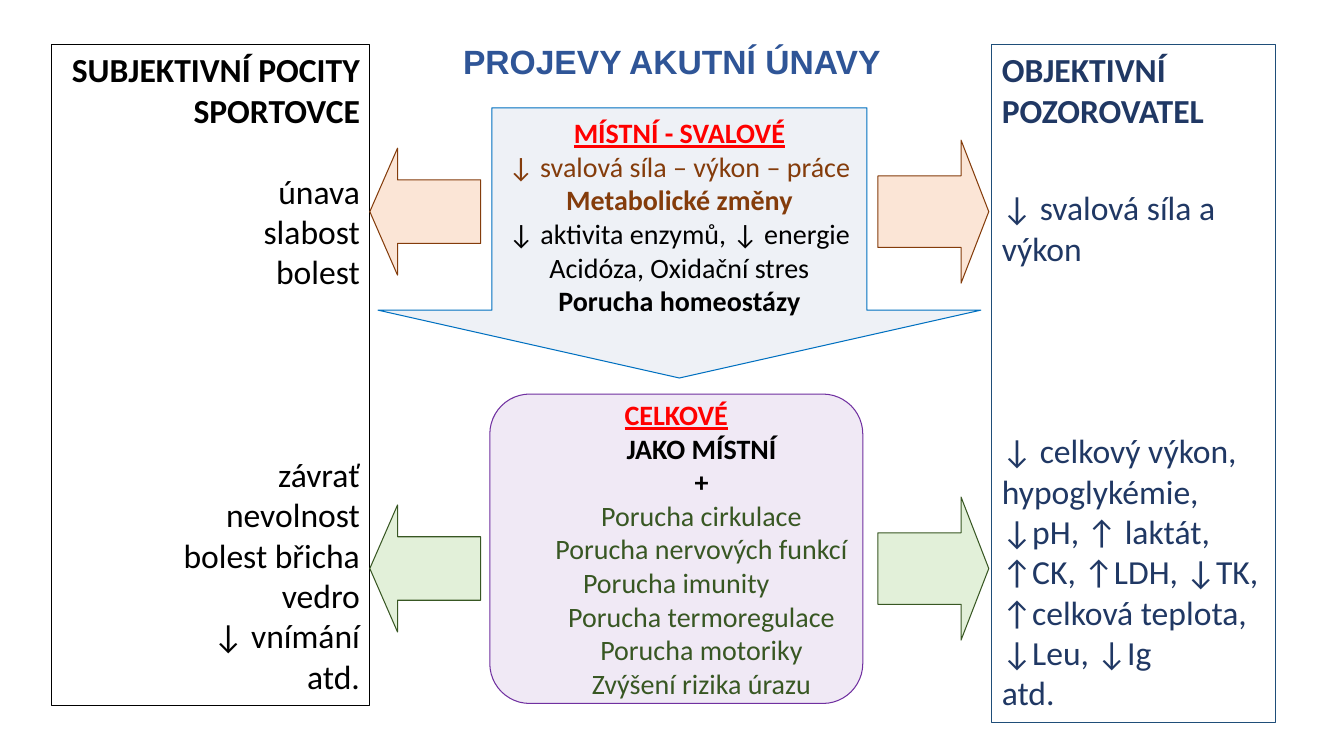
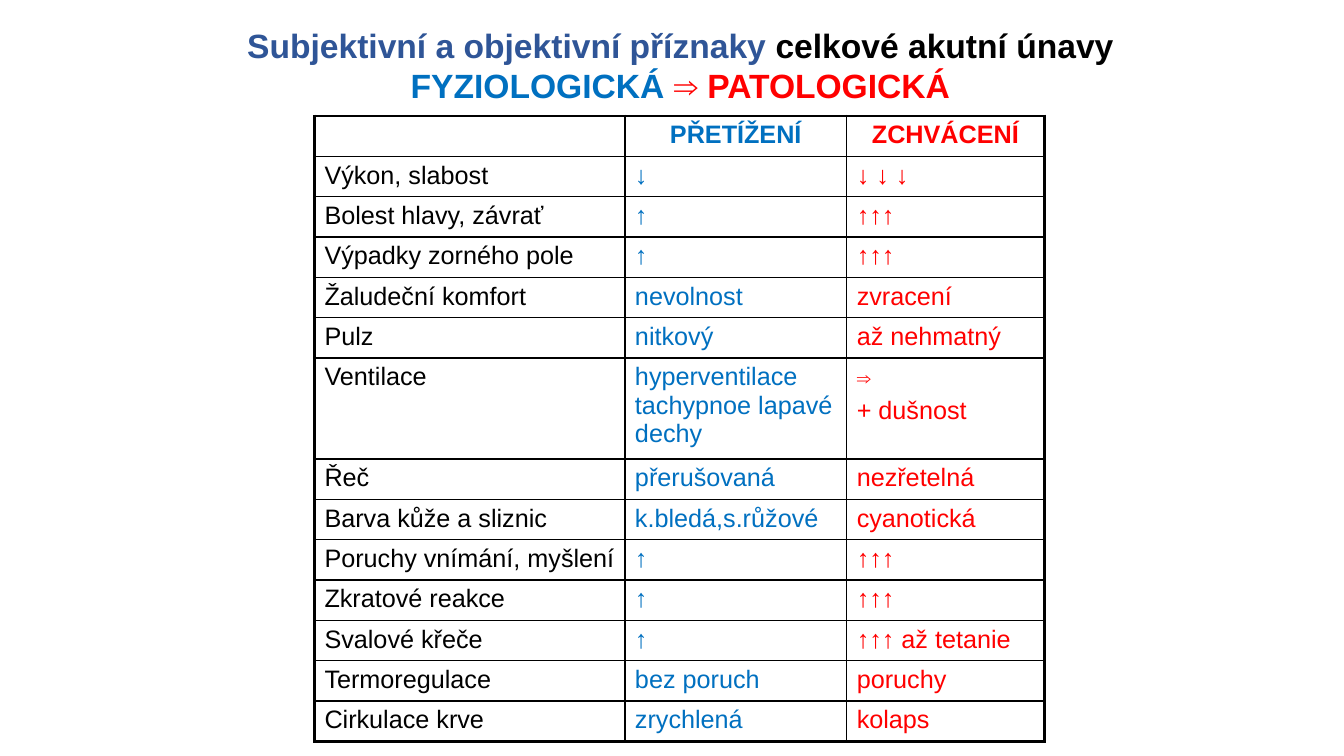
from dataclasses import dataclass

from lxml import etree
from pptx import Presentation
from pptx.dml.color import RGBColor
from pptx.enum.shapes import MSO_SHAPE
from pptx.enum.text import MSO_ANCHOR, PP_ALIGN
from pptx.oxml.ns import qn
from pptx.util import Pt

RECTANGLE = MSO_SHAPE.RECTANGLE
ROUNDED = MSO_SHAPE.ROUNDED_RECTANGLE
DOWN_ARROW = MSO_SHAPE.DOWN_ARROW
LEFT_ARROW = MSO_SHAPE.LEFT_ARROW
RIGHT_ARROW = MSO_SHAPE.RIGHT_ARROW
TOP, MIDDLE = MSO_ANCHOR.TOP, MSO_ANCHOR.MIDDLE
LEFT, CENTER, RIGHT = PP_ALIGN.LEFT, PP_ALIGN.CENTER, PP_ALIGN.RIGHT

BLACK, RED, BLUE, TITLE_BLUE = "000000", "FF0000", "0070C0", "2F5597"
NAVY, STEEL, PURPLE = "203864", "1F4E79", "7030A0"
BROWN, PEACH, GREEN, MINT = "843C0B", "FBE5D6", "385723", "E2F0D9"
HEADING_FONT, BODY_FONT = "Arial", "Calibri"
THIN, THICK = 1, 2.25


@dataclass
class Line:
    text: str
    color: str = BLACK
    bold: bool = False
    underline: bool = False
    before: float = 0
    indent: float = 0


def rgb(value):
    return RGBColor.from_string(value)


def style(font, name, size, color, bold=False, underline=False):
    font.name = name
    font.size = Pt(size)
    font.color.rgb = rgb(color)
    font.bold = bold
    font.underline = underline


def set_alpha(shape, percent):
    color = shape.fill._xPr.find(qn("a:solidFill"))[0]
    etree.SubElement(color, qn("a:alpha"), val=str(percent * 1000))


def add_outline_shape(slide, kind, box, outline, fill=None, alpha=None, adjustments=()):
    shape = slide.shapes.add_shape(kind, *map(Pt, box))
    shape.shadow.inherit = False
    for index, value in enumerate(adjustments):
        shape.adjustments[index] = value
    if fill:
        shape.fill.solid()
        shape.fill.fore_color.rgb = rgb(fill)
        if alpha:
            set_alpha(shape, alpha)
    else:
        shape.fill.background()
    shape.line.color.rgb = rgb(outline)
    shape.line.width = Pt(0.75)
    return shape


def write_lines(shape, lines, size, align, anchor=TOP, wrap=True):
    frame = shape.text_frame
    frame.word_wrap = wrap
    frame.vertical_anchor = anchor
    for index, line in enumerate(lines):
        paragraph = frame.paragraphs[0] if index == 0 else frame.add_paragraph()
        paragraph.text = line.text
        paragraph.alignment = align
        if line.before:
            paragraph.space_before = Pt(line.before)
        if line.indent:
            paragraph.level = 1
            properties = paragraph._p.get_or_add_pPr()
            properties.set("marL", str(Pt(line.indent)))
            properties.set("indent", "0")
        style(paragraph.font, BODY_FONT, size, line.color, line.bold, line.underline)


def add_title(slide, box, rows):
    frame = slide.shapes.add_textbox(*map(Pt, box)).text_frame
    frame.word_wrap = True
    frame.vertical_anchor = MIDDLE
    paragraph = frame.paragraphs[0]
    paragraph.alignment = CENTER
    style(paragraph.font, HEADING_FONT, 24, TITLE_BLUE, bold=True)
    for index, row in enumerate(rows):
        if index:
            paragraph.add_line_break()
        for text, color in row:
            run = paragraph.add_run()
            run.text = text
            run.font.color.rgb = rgb(color)


def set_borders(cell, widths):
    properties = cell._tc.get_or_add_tcPr()
    for side, width in zip(("L", "R", "T", "B"), widths):
        border = etree.SubElement(properties, qn(f"a:ln{side}"), w=str(Pt(width)))
        fill = etree.SubElement(border, qn("a:solidFill"))
        etree.SubElement(fill, qn("a:srgbClr"), val=BLACK)


def write_cell(cell, text, color, header):
    frame = cell.text_frame
    for index, row in enumerate(text.split("\n")):
        paragraph = frame.paragraphs[0] if index == 0 else frame.add_paragraph()
        paragraph.alignment = CENTER if header else LEFT
        if index:
            paragraph.space_before = Pt(3.6)
        style(paragraph.font, HEADING_FONT, 18, color, bold=header)
        if row.startswith("⇒"):
            symbol = paragraph.add_run()
            symbol.text = "⇒"
            symbol.font.size = Pt(14)
            symbol.font.bold = True
            row = row[1:]
        if row:
            paragraph.add_run().text = row


def add_symptom_table(slide, left, top, column_widths, row_height, tall_rows, rows):
    heights = [tall_rows.get(index, row_height) for index in range(len(rows))]
    frame = slide.shapes.add_table(
        len(rows), len(column_widths),
        Pt(left), Pt(top), Pt(sum(column_widths)), Pt(sum(heights)),
    )
    table = frame.table
    table.first_row = False
    table.horz_banding = False
    for column, width in zip(table.columns, column_widths):
        column.width = Pt(width)
    last_row, last_column = len(rows) - 1, len(column_widths) - 1
    for r, texts in enumerate(rows):
        table.rows[r].height = Pt(heights[r])
        for c, (text, color) in enumerate(zip(texts, (BLACK, BLUE, RED))):
            cell = table.cell(r, c)
            outer = (c == 0, c == last_column, r == 0, r == last_row)
            set_borders(cell, [THICK if edge else THIN for edge in outer])
            cell.fill.background()
            write_cell(cell, text, color, header=r == 0)


def build_manifestations(slide):
    feelings = add_outline_shape(slide, RECTANGLE, (36.7, 31.7, 227.5, 472.3), BLACK)
    write_lines(feelings, [
        Line("SUBJEKTIVNÍ POCITY SPORTOVCE", bold=True),
        Line("únava", before=29),
        Line("slabost"),
        Line("bolest"),
        Line("závrať", before=116),
        Line("nevolnost"),
        Line("bolest břicha"),
        Line("vedro"),
        Line("↓ vnímání"),
        Line("atd."),
    ], 24, RIGHT)

    local = add_outline_shape(
        slide, DOWN_ARROW, (270, 77, 430.6, 193), BLUE, TITLE_BLUE, 8, (0.622, 0.251))
    local.text_frame.margin_bottom = Pt(11)
    write_lines(local, [
        Line("MÍSTNÍ - SVALOVÉ", RED, True, True),
        Line("↓ svalová síla – výkon – práce", BROWN),
        Line("Metabolické změny", BROWN, True),
        Line("↓ aktivita enzymů, ↓ energie"),
        Line("Acidóza, Oxidační stres"),
        Line("Porucha homeostázy", bold=True),
    ], 20, CENTER, MIDDLE, wrap=False)

    overall = add_outline_shape(
        slide, ROUNDED, (349.9, 281.5, 266.4, 221), PURPLE, PURPLE, 10, (0.129,))
    write_lines(overall, [
        Line("CELKOVÉ", RED, True, True),
        Line("JAKO MÍSTNÍ", bold=True, indent=36),
        Line("+", bold=True, indent=36),
        Line("Porucha cirkulace", GREEN, indent=36),
        Line("Porucha nervových funkcí", GREEN, indent=36),
        Line("Porucha imunity", GREEN),
        Line("Porucha termoregulace", GREEN, indent=36),
        Line("Porucha motoriky", GREEN, indent=36),
        Line("Zvýšení rizika úrazu", GREEN, indent=36),
    ], 20, CENTER, MIDDLE, wrap=False)

    add_title(slide, (320.4, 28.1, 319, 31.7), [[("PROJEVY AKUTNÍ ÚNAVY", TITLE_BLUE)]])

    observer = add_outline_shape(slide, RECTANGLE, (708.5, 31.7, 202.3, 484.6), STEEL)
    write_lines(observer, [
        Line("OBJEKTIVNÍ POZOROVATEL", NAVY, True),
        Line("↓ svalová síla a výkon", NAVY, before=41),
        Line("↓ celkový výkon, hypoglykémie,", NAVY, before=116),
        Line("↓pH, ↑ laktát, ↑CK, ↑LDH, ↓TK, ↑celková teplota, ↓Leu, ↓Ig", NAVY),
        Line("atd.", NAVY),
    ], 24, LEFT)

    for middle, fill, outline in ((151.2, PEACH, BROWN), (406.1, MINT, GREEN)):
        for kind, left, height in ((LEFT_ARROW, 264.2, 90.7), (RIGHT_ARROW, 627.1, 102.2)):
            box = (left, middle - height / 2, 79.2, height)
            add_outline_shape(slide, kind, box, outline, fill, adjustments=(0.5, 0.25))


def build_symptoms(slide):
    add_title(slide, (168.5, 15.1, 635, 62.6), [
        [("Subjektivní a objektivní příznaky ", TITLE_BLUE), ("celkové akutní únavy", BLACK)],
        [("FYZIOLOGICKÁ ", BLUE), ("⇒ PATOLOGICKÁ", RED)],
    ])
    add_symptom_table(slide, 224.6, 82.8, (221.8, 158.4, 141.1), 28.8, {6: 72}, [
        ("", "PŘETÍŽENÍ", "ZCHVÁCENÍ"),
        ("Výkon, slabost", "↓", "↓ ↓ ↓"),
        ("Bolest hlavy, závrať", "↑", "↑↑↑"),
        ("Výpadky zorného pole", "↑", "↑↑↑"),
        ("Žaludeční komfort", "nevolnost", "zvracení"),
        ("Pulz", "nitkový", "až nehmatný"),
        ("Ventilace", "hyperventilace tachypnoe lapavé dechy", "⇒ \n+ dušnost"),
        ("Řeč", "přerušovaná", "nezřetelná"),
        ("Barva kůže a sliznic", "k.bledá,s.růžové", "cyanotická"),
        ("Poruchy vnímání, myšlení", "↑", "↑↑↑"),
        ("Zkratové reakce", "↑", "↑↑↑"),
        ("Svalové křeče", "↑", "↑↑↑ až tetanie"),
        ("Termoregulace", "bez poruch", "poruchy"),
        ("Cirkulace krve", "zrychlená", "kolaps"),
    ])


def main():
    presentation = Presentation()
    presentation.slide_width = Pt(960)
    presentation.slide_height = Pt(540)
    blank = presentation.slide_layouts[6]
    for build in (build_manifestations, build_symptoms):
        build(presentation.slides.add_slide(blank))
    presentation.save("out.pptx")


if __name__ == "__main__":
    main()
